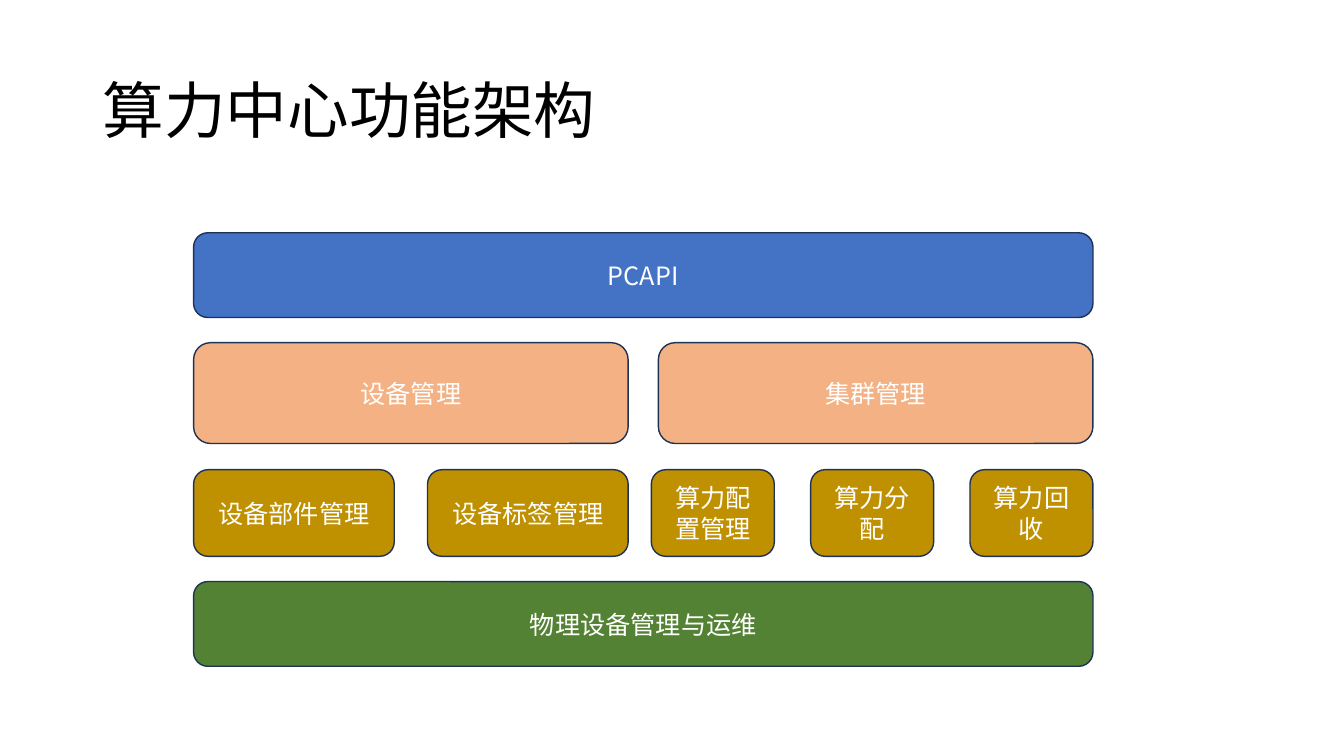
from lxml import etree
from pptx import Presentation
from pptx import util as u
from pptx.dml import color
from pptx.enum import shapes, text
from pptx.oxml import ns

FONT = "Noto Sans CJK SC"
LEFT, WIDTH = 1.92, 8.92
HALF = 4.31
RIGHT = LEFT + WIDTH


def paint(target, hex_color):
    """Give a fill a solid colour."""
    target.solid()
    target.fore_color.rgb = color.RGBColor.from_string(hex_color)


def add_run(paragraph, words, size, hex_color):
    """Add a run in the slide font for Latin and East Asian text."""
    run = paragraph.add_run()
    run.text = words
    run.font.size = u.Pt(size)
    paint(run.font.fill, hex_color)
    run.font.name = FONT
    east_asian = etree.SubElement(run.font._element, ns.qn("a:ea"))
    east_asian.set("typeface", FONT)


def add_title(slide, left, top, width, height, words):
    """Place the slide title in the given box."""
    shape = slide.shapes.add_textbox(*map(u.Inches, (left, top, width, height)))
    frame = shape.text_frame
    frame.word_wrap = True
    frame.vertical_anchor = text.MSO_ANCHOR.MIDDLE
    paragraph = frame.paragraphs[0]
    paragraph.line_spacing = 0.9
    add_run(paragraph, words, 44, "000000")


def add_block(slide, left, top, width, height, label, fill):
    """Place one rounded block with a centred label."""
    shape = slide.shapes.add_shape(
        shapes.MSO_SHAPE.ROUNDED_RECTANGLE,
        *map(u.Inches, (left, top, width, height)),
    )
    shape.shadow.inherit = False
    paint(shape.fill, fill)
    paint(shape.line.fill, "1E3256")
    shape.line.width = u.Pt(1)
    frame = shape.text_frame
    frame.word_wrap = True
    frame.vertical_anchor = text.MSO_ANCHOR.MIDDLE
    paragraph = frame.paragraphs[0]
    paragraph.alignment = text.PP_ALIGN.CENTER
    add_run(paragraph, label, 18, "FFFFFF")


def add_row(slide, left, top, width, height, block_width, labels, fill):
    """Spread equal blocks evenly from edge to edge of the given box."""
    step = (width - block_width) / max(len(labels) - 1, 1)
    for index, label in enumerate(labels):
        add_block(slide, left + index * step, top, block_width, height, label, fill)


def add_architecture(slide):
    """Stack the layers of the computing centre."""
    cluster_left = 6.46
    rows = [
        (LEFT, 2.31, WIDTH, 0.84, WIDTH, ["PCAPI"], "4472C4"),
        (LEFT, 3.4, WIDTH, 1, HALF, ["设备管理", "集群管理"], "F4B183"),
        (LEFT, 4.66, HALF, 0.86, 1.99, ["设备部件管理", "设备标签管理"], "BF9000"),
        (cluster_left, 4.66, RIGHT - cluster_left, 0.86, 1.22,
         ["算力配置管理", "算力分配", "算力回收"], "BF9000"),
        (LEFT, 5.77, WIDTH, 0.84, WIDTH, ["物理设备管理与运维"], "548235"),
    ]
    for row in rows:
        add_row(slide, *row)


def main():
    """Build and save the presentation."""
    presentation = Presentation()
    presentation.slide_width = u.Inches(13.33)
    presentation.slide_height = u.Inches(7.5)
    slide = presentation.slides.add_slide(presentation.slide_layouts[6])
    add_title(slide, 0.92, 0.4, 11.5, 1.45, "算力中心功能架构")
    add_architecture(slide)
    presentation.save("out.pptx")


if __name__ == "__main__":
    main()
